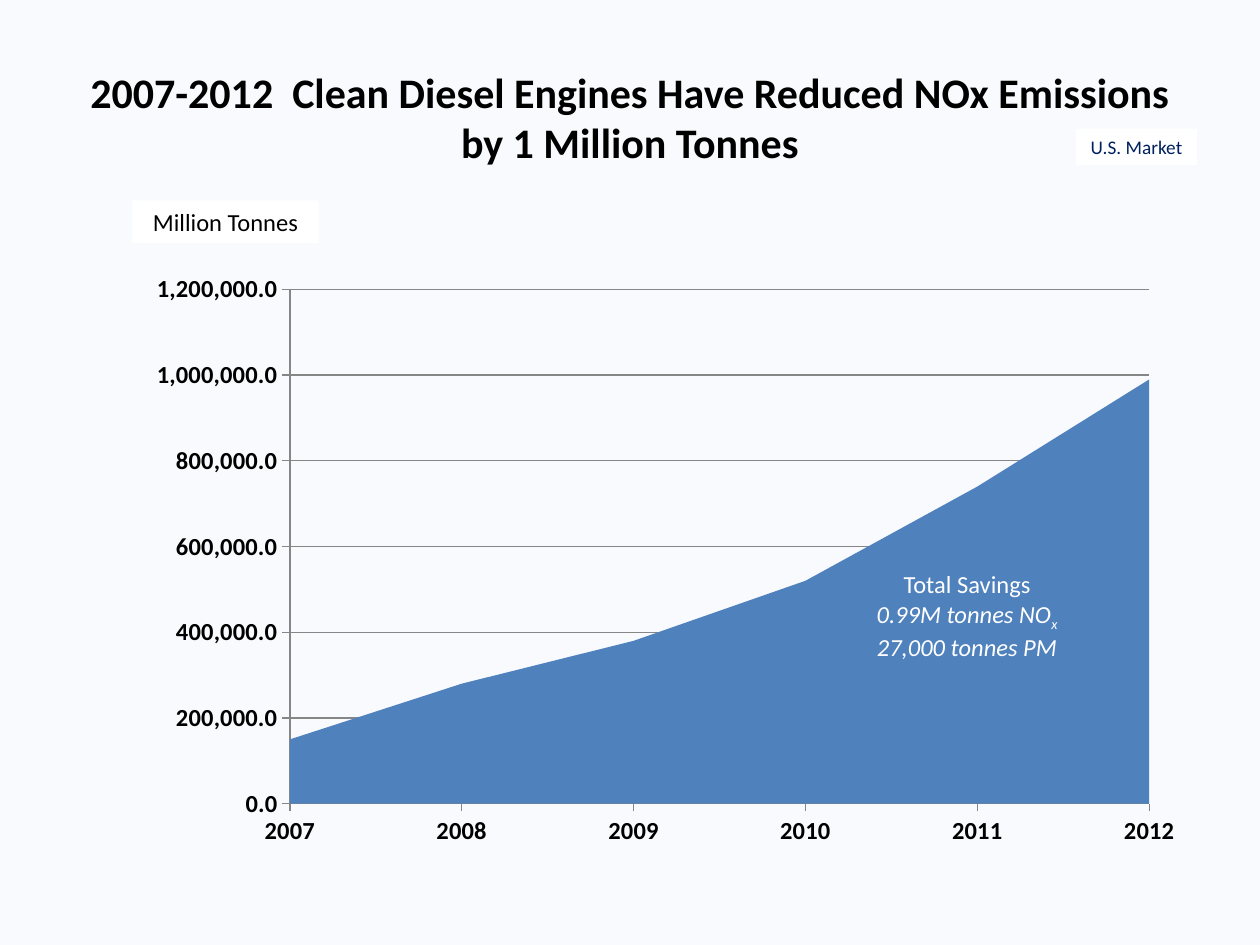
from lxml import etree
from pptx import Presentation
from pptx.chart.data import CategoryChartData
from pptx.dml.color import RGBColor
from pptx.enum.chart import XL_CHART_TYPE, XL_TICK_MARK
from pptx.enum.shapes import MSO_SHAPE
from pptx.enum.text import MSO_ANCHOR, PP_ALIGN
from pptx.oxml.ns import qn
from pptx.util import Inches, Pt

AREA = XL_CHART_TYPE.AREA
OUTSIDE = XL_TICK_MARK.OUTSIDE
RECTANGLE = MSO_SHAPE.RECTANGLE
CENTER = PP_ALIGN.CENTER
TOP, MIDDLE = MSO_ANCHOR.TOP, MSO_ANCHOR.MIDDLE
FONT = "Calibri"
COLORS = {
    "background": "F8FAFD",
    "text": "000000",
    "white": "FFFFFF",
    "market": "002060",
    "area": "4F81BD",
    "axis": "868686",
}


def color(name):
    return RGBColor.from_string(COLORS[name])


def write_text(shape, lines, size, color_name, anchor=TOP, wrap=True, bold=False):
    frame = shape.text_frame
    frame.word_wrap = wrap
    frame.vertical_anchor = anchor
    for index, runs in enumerate(lines):
        paragraph = frame.add_paragraph() if index else frame.paragraphs[0]
        paragraph.alignment = CENTER
        for text, italic, baseline in runs:
            run = paragraph.add_run()
            run.text = text
            run.font.name = FONT
            run.font.size = Pt(size)
            run.font.bold = bold
            run.font.italic = italic
            run.font.color.rgb = color(color_name)
            if baseline:
                run._r.get_or_add_rPr().set("baseline", str(baseline))


presentation = Presentation()
presentation.slide_width = Inches(10)
presentation.slide_height = Inches(7.5)
slide = presentation.slides.add_slide(presentation.slide_layouts[6])
slide.background.fill.solid()
slide.background.fill.fore_color.rgb = color("background")

title = slide.shapes.add_textbox(Inches(0.5), Inches(0.3), Inches(9), Inches(1.25))
title_text = "2007-2012  Clean Diesel Engines Have Reduced NOx Emissions by 1 Million Tonnes"
write_text(title, [[(title_text, False, 0)]], 24, "text", MIDDLE, bold=True)

chart_data = CategoryChartData(number_format="#,##0.0")
chart_data.categories = ["2007", "2008", "2009", "2010", "2011", "2012"]
chart_data.add_series("Series 1", [150000, 280000, 380000, 520000, 740000, 990000])
chart = slide.shapes.add_chart(
    AREA, Inches(1.08), Inches(2.08), Inches(8.42), Inches(4.73), chart_data
).chart
chart.has_legend = False
chart.has_title = False
chart.font.name = FONT
chart.font.size = Pt(18)
chart.font.color.rgb = color("text")
plot = chart.plots[0]
plot.vary_by_categories = False
series_fill = plot.series[0].format.fill
series_fill.solid()
series_fill.fore_color.rgb = color("area")

value_axis = chart.value_axis
value_axis.minimum_scale = 0
value_axis.maximum_scale = 1200000
value_axis.major_unit = 200000
value_axis.has_major_gridlines = True
value_axis.tick_labels.number_format = "#,##0.0"
value_axis.tick_labels.number_format_is_linked = False
for axis in (chart.category_axis, value_axis):
    axis.major_tick_mark = OUTSIDE
    axis.tick_labels.font.name = FONT
    axis.tick_labels.font.size = Pt(14)
    axis.tick_labels.font.bold = True
    axis.tick_labels.font.color.rgb = color("text")
for line in (chart.category_axis.format.line, value_axis.format.line,
             value_axis.major_gridlines.format.line):
    line.color.rgb = color("axis")
    line.width = Pt(0.75)

plot_area = chart._chartSpace.chart.plotArea
for old_layout in plot_area.findall(qn("c:layout")):
    plot_area.remove(old_layout)
layout = etree.Element(qn("c:layout"))
manual_layout = etree.SubElement(layout, qn("c:manualLayout"))
for tag, value in (("layoutTarget", "inner"), ("xMode", "edge"), ("yMode", "edge"),
                   ("x", "0.145"), ("y", "0.046"), ("w", "0.81"), ("h", "0.863")):
    etree.SubElement(manual_layout, qn(f"c:{tag}")).set("val", value)
plot_area.insert(0, layout)

labels = [
    ("Million Tonnes", 1.05, 1.59, 1.48, 0.34, 14, "text", TOP, True),
    ("U.S. Market", 8.54, 1.02, 0.96, 0.29, 11, "market", MIDDLE, False),
]
for text, left, top, width, height, size, color_name, anchor, wrap in labels:
    label = slide.shapes.add_shape(
        RECTANGLE, Inches(left), Inches(top), Inches(width), Inches(height)
    )
    label.shadow.inherit = False
    label.fill.solid()
    label.fill.fore_color.rgb = color("white")
    label.line.fill.background()
    write_text(label, [[(text, False, 0)]], size, color_name, anchor, wrap)

savings = slide.shapes.add_textbox(Inches(6.72), Inches(4.47), Inches(1.91), Inches(0.81))
savings_lines = [
    [("Total Savings", False, 0)],
    [("0.99M tonnes NO", True, 0), ("x", True, -25000)],
    [("27,000 tonnes PM", True, 0)],
]
write_text(savings, savings_lines, 14, "white")

presentation.save("out.pptx")
